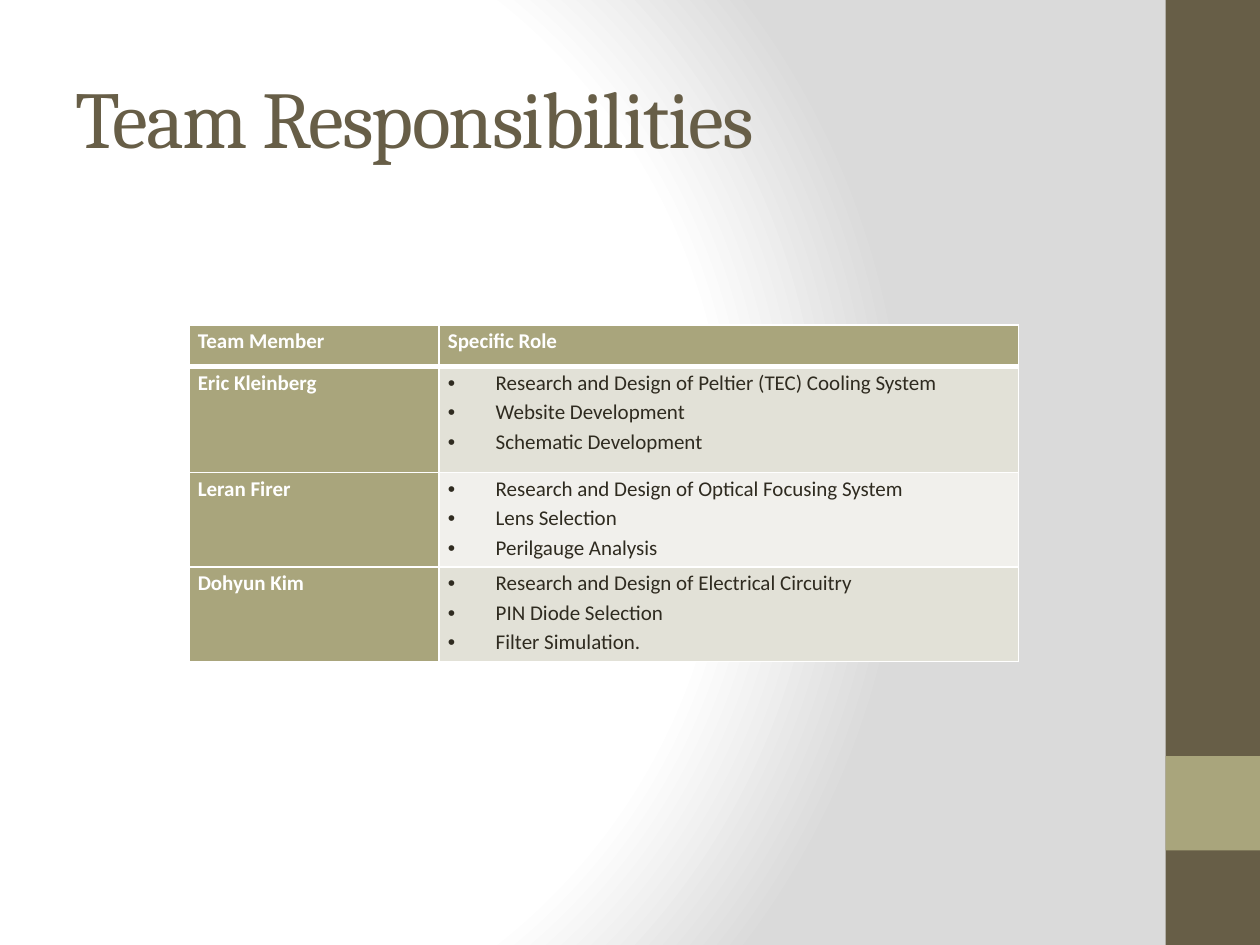
from lxml import etree
from pptx import Presentation
from pptx.dml.color import RGBColor
from pptx.enum.shapes import MSO_SHAPE
from pptx.enum.text import MSO_ANCHOR
from pptx.oxml.ns import qn
from pptx.util import Inches, Pt

RECTANGLE = MSO_SHAPE.RECTANGLE
MIDDLE = MSO_ANCHOR.MIDDLE
BROWN, OLIVE, WHITE, INK = "675E47", "A9A57C", "FFFFFF", "2F2B20"
BANDS = ["E2E1D7", "F1F0EC"]
CELL = 0.25
HEADER = ["Team Member", "Specific Role"]
TEAM = {
    "Eric Kleinberg": [
        "Research and Design of Peltier (TEC) Cooling System",
        "Website Development",
        "Schematic Development",
    ],
    "Leran Firer": [
        "Research and Design of Optical Focusing System",
        "Lens Selection",
        "Perilgauge Analysis",
    ],
    "Dohyun Kim": [
        "Research and Design of Electrical Circuitry",
        "PIN Diode Selection",
        "Filter Simulation.",
    ],
}


def color(value):
    return RGBColor.from_string(value)


def grid(*counts):
    return [Inches(count * CELL) for count in counts]


def add_xml(parent, tag, **attributes):
    values = {name: str(value) for name, value in attributes.items()}
    return etree.SubElement(parent, qn(tag), values)


class SlideBuilder:
    """Draws styled elements on one slide, placed on a grid of 40 by 30 cells."""

    def __init__(self, slide, heading_font="Cambria", body_font="Calibri"):
        self.slide = slide
        self.heading_font = heading_font
        self.body_font = body_font

    def background(self, stops, focus):
        fill = self.slide.background.fill
        fill.gradient()
        gradient = self.slide.background._cSld.find(".//" + qn("a:gradFill"))
        for child in list(gradient):
            gradient.remove(child)
        stop_list = add_xml(gradient, "a:gsLst")
        for position, value in stops:
            stop = add_xml(stop_list, "a:gs", pos=position * 1000)
            add_xml(stop, "a:srgbClr", val=value)
        path = add_xml(gradient, "a:path", path="circle")
        sides = {side: share * 1000 for side, share in zip("ltrb", focus)}
        add_xml(path, "a:fillToRect", **sides)

    def block(self, left, top, width, height, fill):
        shape = self.slide.shapes.add_shape(RECTANGLE, *grid(left, top, width, height))
        shape.shadow.inherit = False
        shape.fill.solid()
        shape.fill.fore_color.rgb = color(fill)
        shape.line.fill.background()

    def font(self, paragraph, name, size, value, bold=False):
        font = paragraph.font
        font.name, font.size, font.bold = name, Pt(size), bold
        font.color.rgb = color(value)
        return font

    def title(self, left, top, width, height, text):
        frame = self.slide.shapes.add_textbox(*grid(left, top, width, height)).text_frame
        frame.word_wrap = True
        frame.vertical_anchor = MIDDLE
        paragraph = frame.paragraphs[0]
        paragraph.text = text
        font = self.font(paragraph, self.heading_font, 46, BROWN)
        font._element.set("spc", "-100")

    def table(self, left, top, columns, rows, header, team):
        frame = self.slide.shapes.add_table(
            len(rows), len(columns), *grid(left, top, sum(columns), sum(rows))
        )
        table = frame.table
        for column, width in zip(table.columns, grid(*columns)):
            column.width = width
        for row, height in zip(table.rows, grid(*rows)):
            row.height = height
        for index, text in enumerate(header):
            self.cell(table.cell(0, index), [text], OLIVE, bottom=3)
        for index, (member, roles) in enumerate(team.items()):
            edge = 1 if index else 3
            band = BANDS[index % len(BANDS)]
            self.cell(table.cell(index + 1, 0), [member], OLIVE, top=edge)
            self.cell(table.cell(index + 1, 1), roles, band, top=edge, bulleted=True)

    def cell(self, cell, lines, fill, top=1, bottom=1, bulleted=False):
        cell.margin_left = cell.margin_right = Inches(0.07)
        cell.margin_top = cell.margin_bottom = 0
        properties = cell._tc.get_or_add_tcPr()
        for side, width in zip("LRTB", (1, 1, top, bottom)):
            line = add_xml(properties, f"a:ln{side}", w=Pt(width))
            add_xml(add_xml(line, "a:solidFill"), "a:srgbClr", val=WHITE)
        cell.fill.solid()
        cell.fill.fore_color.rgb = color(fill)
        cell.text = "\n".join(lines)
        for paragraph in cell.text_frame.paragraphs:
            paragraph.line_spacing = 1.15
            if bulleted:
                self.bullet(paragraph, 0.38)
            self.font(paragraph, self.body_font, 12, INK if bulleted else WHITE, not bulleted)

    def bullet(self, paragraph, indent):
        properties = paragraph._p.get_or_add_pPr()
        properties.set("marL", str(Inches(indent)))
        properties.set("indent", str(-Inches(indent)))
        add_xml(properties, "a:buFont", typeface="Arial")
        add_xml(properties, "a:buChar", char="•")


def main():
    presentation = Presentation()
    presentation.slide_width, presentation.slide_height = grid(40, 30)
    slide = presentation.slides.add_slide(presentation.slide_layouts[6])
    builder = SlideBuilder(slide)
    builder.background([(0, WHITE), (75, WHITE), (100, "DADADA")], (20, 50, 100, 50))
    builder.block(37, 0, 3, 30, BROWN)
    builder.block(37, 24, 3, 3, OLIVE)
    builder.title(2, 1.2, 33.3, 5, "Team Responsibilities")
    builder.table(6, 10.32, [7.94, 18.4], [1.32, 3.36, 3, 3], HEADER, TEAM)
    presentation.save("out.pptx")


if __name__ == "__main__":
    main()
